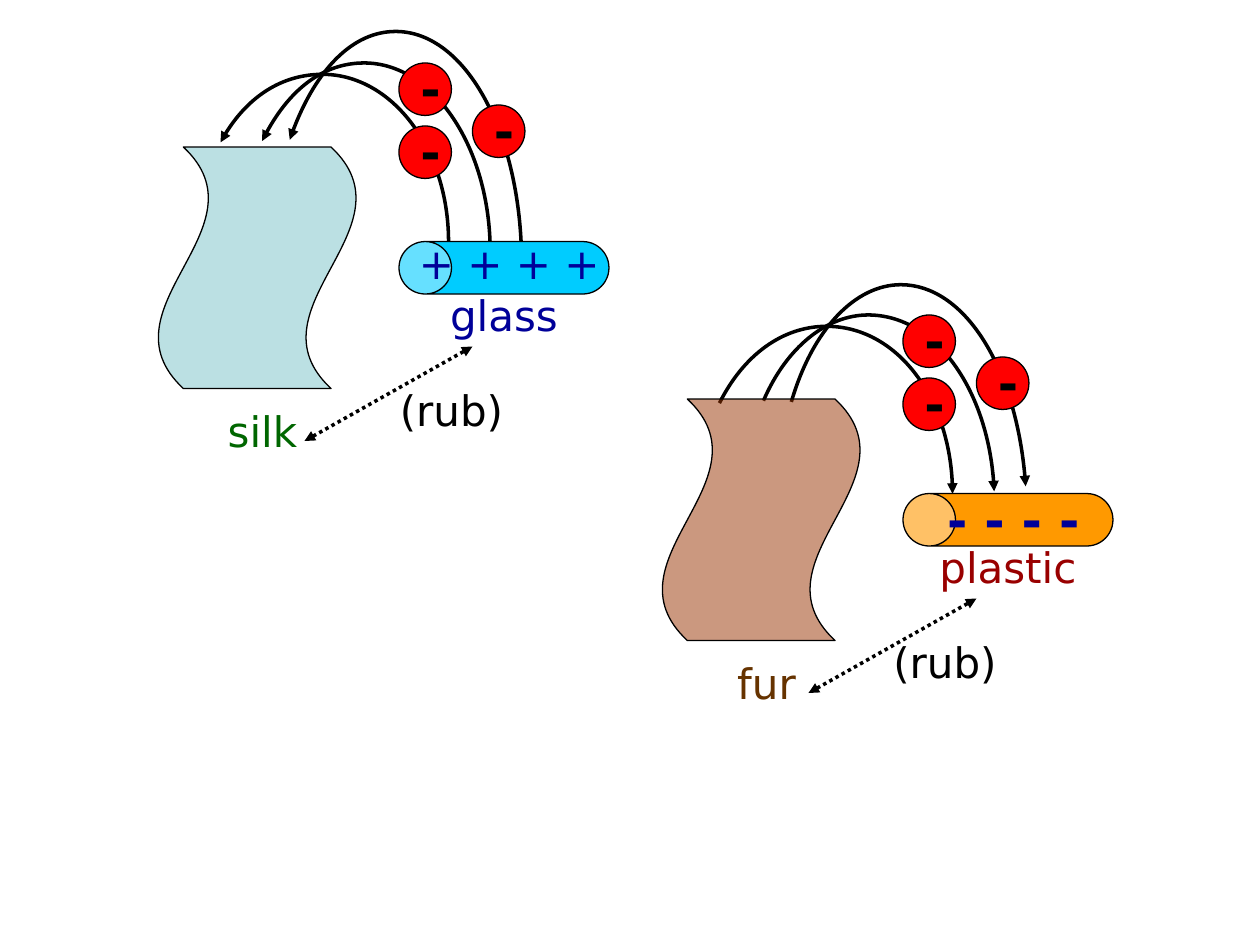
import pptx
import pptx.dml.color
import pptx.enum.dml
import pptx.enum.shapes
import pptx.enum.text
import pptx.oxml
import pptx.oxml.ns
import pptx.util
from lxml import etree

Pt = pptx.util.Pt
qn = pptx.oxml.ns.qn
SHAPE = pptx.enum.shapes.MSO_SHAPE


def rgb(hex_string):
    return pptx.dml.color.RGBColor.from_string(hex_string)


class Scene:
    """Draws on one slide; every position is shifted by the scene's origin."""
    font = "DejaVu Sans"
    ink = "000000"
    electron_red = "FF0000"
    thin, thick = 0.75, 2

    def __init__(self, s, dx, dy):
        self.s, self.dx, self.dy = s, dx, dy

    def place(self, x, y):
        return Pt(x + self.dx), Pt(y + self.dy)

    def shape(self, kind, x, y, w, h, fill, adj=(), rotation=0, alpha=None):
        sp = self.s.shapes.add_shape(kind, *self.place(x, y), Pt(w), Pt(h))
        sp.shadow.inherit = False
        sp.rotation = rotation
        for i, value in enumerate(adj):
            sp.adjustments[i] = value
        sp.fill.solid()
        sp.fill.fore_color.rgb = rgb(fill)
        if alpha is not None:
            clr = sp.element.spPr.find(qn("a:solidFill")).find(qn("a:srgbClr"))
            etree.SubElement(clr, qn("a:alpha"), val=str(alpha * 1000))
        self.outline(sp, self.thin)

    def outline(self, sp, width, ends=(), dash=None):
        """Set a black line; ends names the arrowheads, headEnd before tailEnd."""
        sp.line.color.rgb = rgb(self.ink)
        sp.line.width = Pt(width)
        if dash is not None:
            sp.line.dash_style = dash
        ln = sp.element.spPr.find(qn("a:ln"))
        for end in ends:
            etree.SubElement(ln, qn("a:" + end), type="triangle")

    def text(self, text, x, y, w, h, color=None, size=24, bold=False):
        sp = self.s.shapes.add_textbox(*self.place(x, y), Pt(w), Pt(h))
        tf = sp.text_frame
        tf.word_wrap = True
        tf.auto_size = pptx.enum.text.MSO_AUTO_SIZE.SHAPE_TO_FIT_TEXT
        p = tf.paragraphs[0]
        p.alignment = pptx.enum.text.PP_ALIGN.CENTER
        r = p.add_run()
        r.text = text
        r.font.name, r.font.size, r.font.bold = self.font, Pt(size), bold
        r.font.color.rgb = rgb(color or self.ink)

    def rub_arrow(self, start, end):
        sp = self.s.shapes.add_connector(
            pptx.enum.shapes.MSO_CONNECTOR.STRAIGHT,
            *self.place(*start), *self.place(*end))
        etree.SubElement(sp.element.spPr, qn("a:effectLst"))
        self.outline(sp, self.thick, ("headEnd", "tailEnd"),
                     pptx.enum.dml.MSO_LINE.ROUND_DOT)

    def curve(self, points, end):
        """Draw Bezier segments: a start point, then three points for each."""
        start, *rest = [self.place(*point) for point in points]
        builder = self.s.shapes.build_freeform(*start)
        builder.add_line_segments(rest, close=False)
        sp = builder.convert_to_shape()
        lines = list(sp.element.spPr.iter(qn("a:lnTo")))
        for i in range(0, len(lines), 3):
            bezier = etree.SubElement(lines[i].getparent(), qn("a:cubicBezTo"))
            for line in lines[i:i + 3]:
                bezier.append(line[0])
                line.getparent().remove(line)
        sp.shadow.inherit = False
        sp.fill.background()
        self.outline(sp, self.thick, (end,))

    def electron(self, x, y):
        self.shape(SHAPE.OVAL, x, y, 30, 30, self.electron_red)
        self.text("-", x - 6, y - 6, 48, 41, size=28, bold=True)

    def cloth(self, name, fill, color, alpha=None):
        self.shape(SHAPE.WAVE, 78, 96, 138, 114, fill, (0.13, 0), 270, alpha)
        self.text(name, 84, 228, 132, 36, color)

    def rod(self, name, fill, color, charges, **style):
        self.shape(SHAPE.CAN, 273, 93, 30, 120, fill, (1,), 270)
        self.text(name, 234, 162, 108, 36, color)
        self.text(charges, 222, 132, 138, color="000099", **style)

    def rubbing(self, label_x):
        self.rub_arrow((174, 252), (270, 198))
        self.text("(rub)", label_x, 216, 84, 36)

    def transfer(self, curves, end):
        for points, spot in zip(curves, ELECTRONS):
            self.curve(points, end)
            self.electron(*spot)


ELECTRONS = [(228, 72), (270, 60), (228, 36)]
GLASS_TO_SILK = [
    [(126, 81.4), (139, 56.9), (161.3, 42.5), (184.3, 42.5),
     (223.9, 42.5), (256.3, 85), (256.3, 138.2)],
    [(165.6, 79.9), (178.6, 41.8), (201.6, 18), (226.1, 18),
     (266.4, 18), (298.1, 77), (298.1, 150.5)],
    [(149.8, 80.6), (163.4, 52.6), (185, 36), (208.1, 36),
     (247.7, 36), (280.1, 84.2), (280.1, 144)],
]
FUR_TO_PLASTIC = [
    [(123.1, 86.4), (136.8, 59), (159.1, 42.5), (184.3, 42.5),
     (223.9, 42.5), (256.3, 85), (256.3, 138.2)],
    [(164.2, 85.7), (176.4, 43.9), (200.9, 18.7), (226.8, 18.7),
     (262.8, 18.7), (293.8, 67.7), (298.1, 133.9)],
    [(148.3, 85), (161.3, 54.7), (184.3, 36), (208.1, 36),
     (246.2, 36), (277.9, 80.6), (280.1, 136.8)],
]


def main():
    prs = pptx.Presentation()
    prs.slide_width, prs.slide_height = Pt(720), Pt(540)
    s = prs.slides.add_slide(prs.slide_layouts[6])

    glass = Scene(s, 0, 0)
    glass.rubbing(216)
    glass.transfer(GLASS_TO_SILK, "headEnd")
    glass.cloth("silk", "BBE0E3", "006600")
    glass.rod("glass", "00CCFF", "000099", "+ + + +", h=36)

    plastic = Scene(s, 288, 144)
    plastic.rubbing(210)
    plastic.transfer(FUR_TO_PLASTIC, "tailEnd")
    plastic.cloth("fur", "993300", "663300", alpha=50)
    plastic.rod("plastic", "FF9900", "990000", "- - - -", h=41, size=28, bold=True)

    prs.save("out.pptx")


if __name__ == "__main__":
    main()
